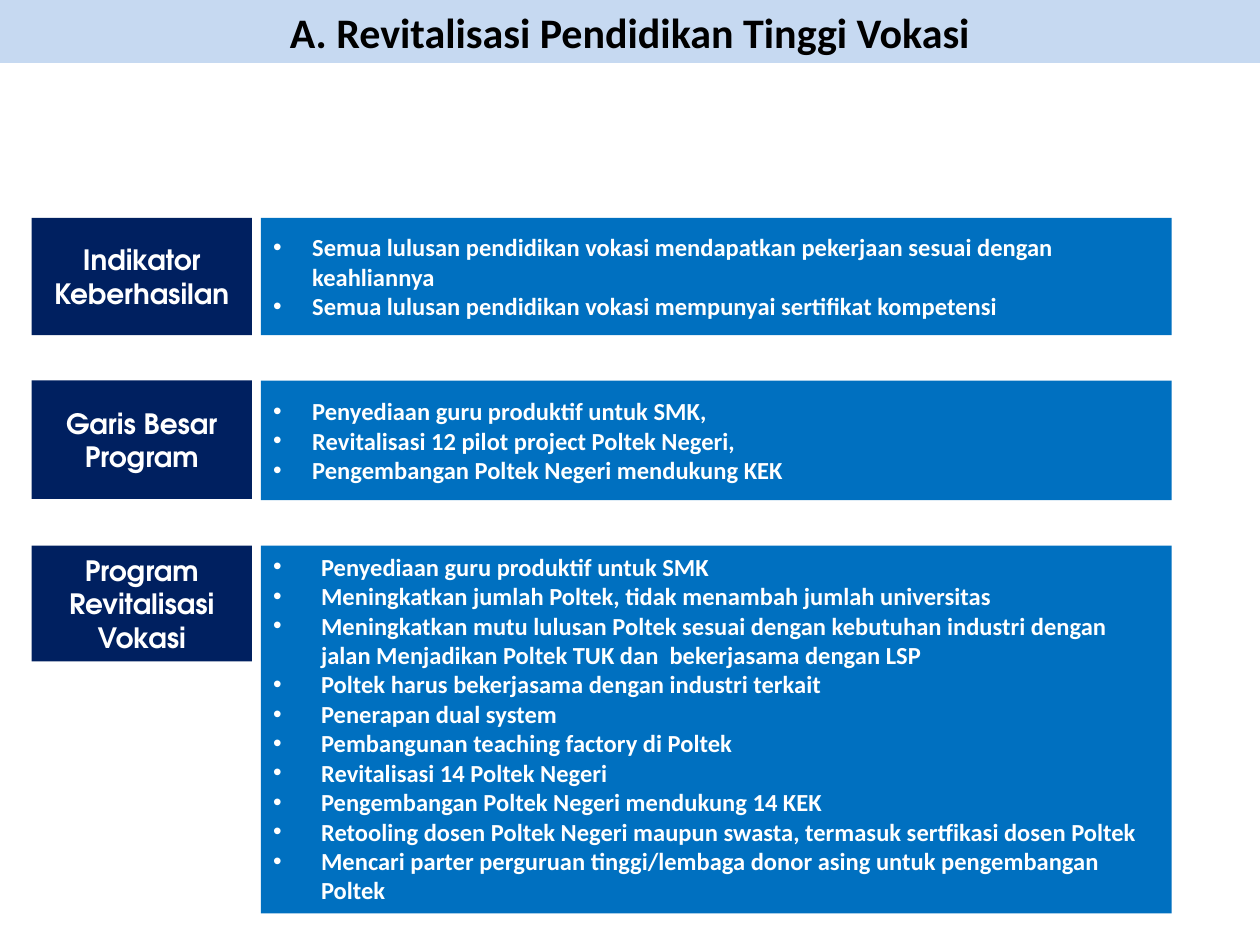
from lxml import etree
from pptx import Presentation
from pptx.dml.color import RGBColor
from pptx.enum.shapes import MSO_SHAPE
from pptx.enum.text import MSO_ANCHOR, PP_ALIGN
from pptx.oxml.ns import qn
from pptx.util import Inches, Pt

RECTANGLE = MSO_SHAPE.RECTANGLE
TOP, MIDDLE = MSO_ANCHOR.TOP, MSO_ANCHOR.MIDDLE
LEFT, CENTER = PP_ALIGN.LEFT, PP_ALIGN.CENTER

BODY_FONT, LABEL_FONT = "Calibri", "TeX Gyre Adventor"
PALE_BLUE, BLUE, NAVY = "C6D9F1", "0070C0", "002060"
WHITE, BLACK = "FFFFFF", "000000"

SLIDE_WIDTH, SLIDE_HEIGHT = 10, 7.5
LABEL_LEFT, LABEL_WIDTH = 0.25, 1.75
PANEL_LEFT, PANEL_WIDTH = 2.07, 7.23

TITLE = "A. Revitalisasi Pendidikan Tinggi Vokasi"
SECTIONS = [
    {
        "label": ["Indikator Keberhasilan"],
        "top": 1.73, "label_height": 0.93, "panel_height": 0.93,
        "anchor": MIDDLE, "indent": 0.31,
        "points": [
            "Semua lulusan pendidikan vokasi mendapatkan pekerjaan sesuai dengan keahliannya",
            "Semua lulusan pendidikan vokasi mempunyai sertifikat kompetensi",
        ],
    },
    {
        "label": ["Garis Besar Program"],
        "top": 3.02, "label_height": 0.94, "panel_height": 0.95,
        "anchor": MIDDLE, "indent": 0.31,
        "points": [
            "Penyediaan guru produktif untuk SMK,",
            "Revitalisasi 12 pilot project Poltek Negeri,",
            "Pengembangan Poltek Negeri mendukung KEK",
        ],
    },
    {
        "label": ["Program Revitalisasi", "Vokasi"],
        "top": 4.33, "label_height": 0.92, "panel_height": 2.92,
        "anchor": TOP, "indent": 0.38,
        "points": [
            "Penyediaan guru produktif untuk SMK",
            "Meningkatkan jumlah Poltek, tidak menambah jumlah universitas",
            "Meningkatkan mutu lulusan Poltek sesuai dengan kebutuhan industri dengan "
            "jalan Menjadikan Poltek TUK dan  bekerjasama dengan LSP",
            "Poltek harus bekerjasama dengan industri terkait",
            "Penerapan dual system",
            "Pembangunan teaching factory di Poltek",
            "Revitalisasi 14 Poltek Negeri",
            "Pengembangan Poltek Negeri mendukung 14 KEK",
            "Retooling dosen Poltek Negeri maupun swasta, termasuk sertfikasi dosen Poltek",
            "Mencari parter perguruan tinggi/lembaga donor asing untuk pengembangan Poltek",
        ],
    },
]


def color(hex_value):
    return RGBColor.from_string(hex_value)


def add_bullet(paragraph, indent):
    """Give the paragraph a hanging round bullet."""
    properties = paragraph._p.get_or_add_pPr()
    properties.set("marL", str(Inches(indent)))
    properties.set("indent", str(-Inches(indent)))
    etree.SubElement(properties, qn("a:buFont")).set("typeface", "Arial")
    etree.SubElement(properties, qn("a:buChar")).set("char", "•")


def add_box(slide, box, fill, lines, size, font=BODY_FONT, text_color=WHITE,
            align=CENTER, anchor=MIDDLE, indent=None):
    """Add a filled rectangle with one bold paragraph per line of text."""
    shape = slide.shapes.add_shape(RECTANGLE, *[Inches(length) for length in box])
    shape.shadow.inherit = False
    shape.fill.solid()
    shape.fill.fore_color.rgb = color(fill)
    shape.line.fill.background()
    frame = shape.text_frame
    frame.word_wrap = True
    frame.vertical_anchor = anchor
    frame.text = "\n".join(lines)
    for paragraph in frame.paragraphs:
        paragraph.alignment = align
        paragraph.font.name = font
        paragraph.font.size = Pt(size)
        paragraph.font.bold = True
        paragraph.font.color.rgb = color(text_color)
        if indent:
            add_bullet(paragraph, indent)


def add_section(slide, section):
    top = section["top"]
    add_box(slide, (PANEL_LEFT, top, PANEL_WIDTH, section["panel_height"]), BLUE,
            section["points"], 14, align=LEFT, anchor=section["anchor"],
            indent=section["indent"])
    add_box(slide, (LABEL_LEFT, top, LABEL_WIDTH, section["label_height"]), NAVY,
            section["label"], 16, font=LABEL_FONT)


def main():
    presentation = Presentation()
    presentation.slide_width = Inches(SLIDE_WIDTH)
    presentation.slide_height = Inches(SLIDE_HEIGHT)
    slide = presentation.slides.add_slide(presentation.slide_layouts[6])
    add_box(slide, (0, 0, SLIDE_WIDTH, 0.5), PALE_BLUE, [TITLE], 24,
            text_color=BLACK, anchor=TOP)
    for section in SECTIONS:
        add_section(slide, section)
    presentation.save("out.pptx")


if __name__ == "__main__":
    main()
